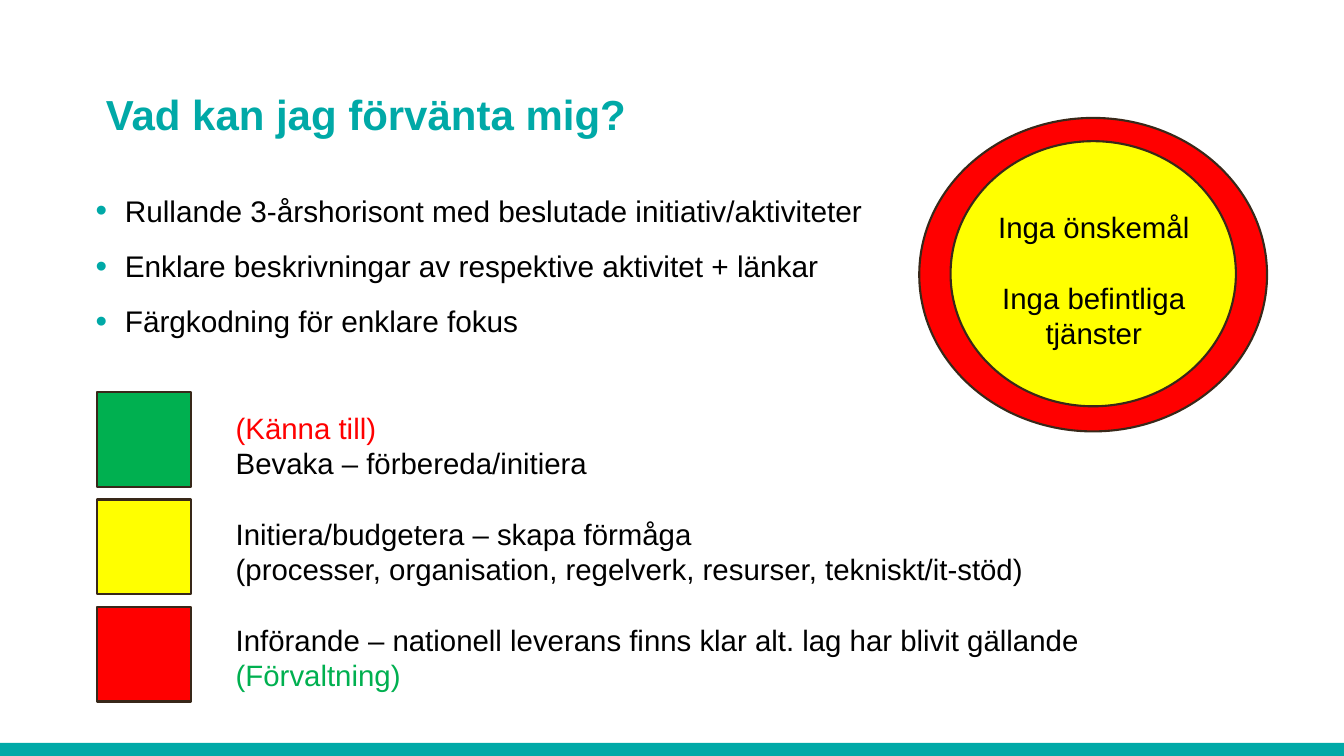
"""Build the slide on what to expect, with its colour-coded legend."""
from dataclasses import dataclass

from lxml import etree
from pptx import Presentation, util as u
from pptx.dml.color import RGBColor
from pptx.enum import shapes, text
from pptx.oxml.ns import qn

TEAL, GREEN, YELLOW, RED = "00A9A7", "00B050", "FFFF00", "FF0000"
BLACK, EDGE = "000000", "382819"
WIDE, HIGH = u.Inches(13.333), u.Inches(7.5)
RECT, OVAL = shapes.MSO_SHAPE.RECTANGLE, shapes.MSO_SHAPE.OVAL


@dataclass
class Box:
    """A frame in percent of the slide's width and height."""
    x: float
    y: float
    w: float
    h: float

    def place(self) -> tuple:
        """Return left, top, width and height as lengths."""
        return tuple(int(part * full / 100) for part, full in
                     zip((self.x, self.y, self.w, self.h), (WIDE, HIGH) * 2))


@dataclass
class Form:
    """A filled preset shape."""
    kind: int
    box: Box
    fill: str
    edge: bool = True


@dataclass
class Line:
    """A paragraph, with its colour and the space before it in points."""
    words: str
    color: str = BLACK
    gap: float = 0


@dataclass
class Block:
    """A text box with one type size and line pitch in points."""
    box: Box
    lines: list[Line]
    size: float
    pitch: float
    align: int = text.PP_ALIGN.LEFT
    bullet: bool = False


def tint(code: str) -> RGBColor:
    """Turn a hex string into a colour."""
    return RGBColor.from_string(code)


def draw(slide, form: Form) -> None:
    """Add one filled shape."""
    shape = slide.shapes.add_shape(form.kind, *form.box.place())
    shape.shadow.inherit = False
    shape.fill.solid()
    shape.fill.fore_color.rgb = tint(form.fill)
    if form.edge:
        shape.line.color.rgb = tint(EDGE)
        shape.line.width = u.Pt(1.5)
    else:
        shape.line.fill.background()


def style(font, size: float, color: str, bold: bool = False) -> None:
    """Set face, size, colour and weight."""
    font.name, font.size, font.bold = "Arial", u.Pt(size), bold
    font.color.rgb = tint(color)


def dot(para) -> None:
    """Give a paragraph a teal bullet and a hanging indent."""
    props = para._p.get_or_add_pPr()
    props.set("marL", str(u.Inches(0.29)))
    props.set("indent", str(-u.Inches(0.29)))
    paint = etree.SubElement(props, qn("a:buClr"))
    etree.SubElement(paint, qn("a:srgbClr"), val=TEAL)
    etree.SubElement(props, qn("a:buSzPct"), val="110000")
    etree.SubElement(props, qn("a:buFont"), typeface="Arial")
    etree.SubElement(props, qn("a:buChar"), char="•")


def write(slide, block: Block) -> None:
    """Add one text box."""
    frame = slide.shapes.add_textbox(*block.box.place()).text_frame
    frame.word_wrap = True
    frame.text = "\n".join(line.words for line in block.lines)
    for para, line in zip(frame.paragraphs, block.lines):
        if block.bullet:
            dot(para)
        para.alignment = block.align
        para.line_spacing = u.Pt(block.pitch)
        para.space_before = u.Pt(line.gap)
        style(para.runs[0].font, block.size, line.color)


def head(slide, words: str) -> None:
    """Place and format the title."""
    title = slide.shapes.title
    title.left, title.top, title.width, title.height = Box(7.88, 4.8, 77.93, 13.6).place()
    frame = title.text_frame
    frame.text = words
    frame.auto_size = text.MSO_AUTO_SIZE.NONE
    frame.vertical_anchor = text.MSO_ANCHOR.BOTTOM
    frame.margin_left = frame.margin_right = frame.margin_top = frame.margin_bottom = 0
    frame.paragraphs[0].alignment = text.PP_ALIGN.LEFT
    style(frame.paragraphs[0].runs[0].font, 30, TEAL, True)


SIZE, PITCH = 21, 25.2
FORMS = [
    Form(RECT, Box(0, 98.27, 100, 1.73), TEAL, False),
    *(Form(RECT, Box(7.2, 51.87 + 14.2 * row, 7.05, 12.53), fill)
      for row, fill in enumerate((GREEN, YELLOW, RED))),
    Form(OVAL, Box(68.4, 15.6, 25.88, 41.47), RED),
    Form(OVAL, Box(70.73, 18.67, 21.23, 35.07), YELLOW),
]
BLOCKS = [
    Block(Box(6.38, 23.87, 89.33, 53.47), [
        Line("Rullande 3-årshorisont med beslutade initiativ/aktiviteter"),
        Line("Enklare beskrivningar av respektive aktivitet + länkar", gap=8.5),
        Line("Färgkodning för enklare fokus", gap=8.5),
    ], 21.3, 30.8, bullet=True),
    Block(Box(16.8, 53.6, 75, 41.47), [
        Line("(Känna till)", RED),
        Line("Bevaka – förbereda/initiera"),
        Line("Initiera/budgetera – skapa förmåga", gap=PITCH),
        Line("(processer, organisation, regelverk, resurser, tekniskt/it-stöd)"),
        Line("Införande – nationell leverans finns klar alt. lag har blivit gällande",
             gap=PITCH),
        Line("(Förvaltning)", GREEN),
    ], SIZE, PITCH),
    Block(Box(72.23, 27.07, 18.3, 17.73), [
        Line("Inga önskemål"),
        Line("Inga befintliga tjänster", gap=PITCH),
    ], SIZE, PITCH, text.PP_ALIGN.CENTER),
]


def main() -> None:
    """Build and save the deck."""
    deck = Presentation()
    deck.slide_width, deck.slide_height = WIDE, HIGH
    slide = deck.slides.add_slide(deck.slide_layouts[5])
    head(slide, "Vad kan jag förvänta mig?")
    for form in FORMS:
        draw(slide, form)
    for block in BLOCKS:
        write(slide, block)
    deck.save("out.pptx")


if __name__ == "__main__":
    main()
